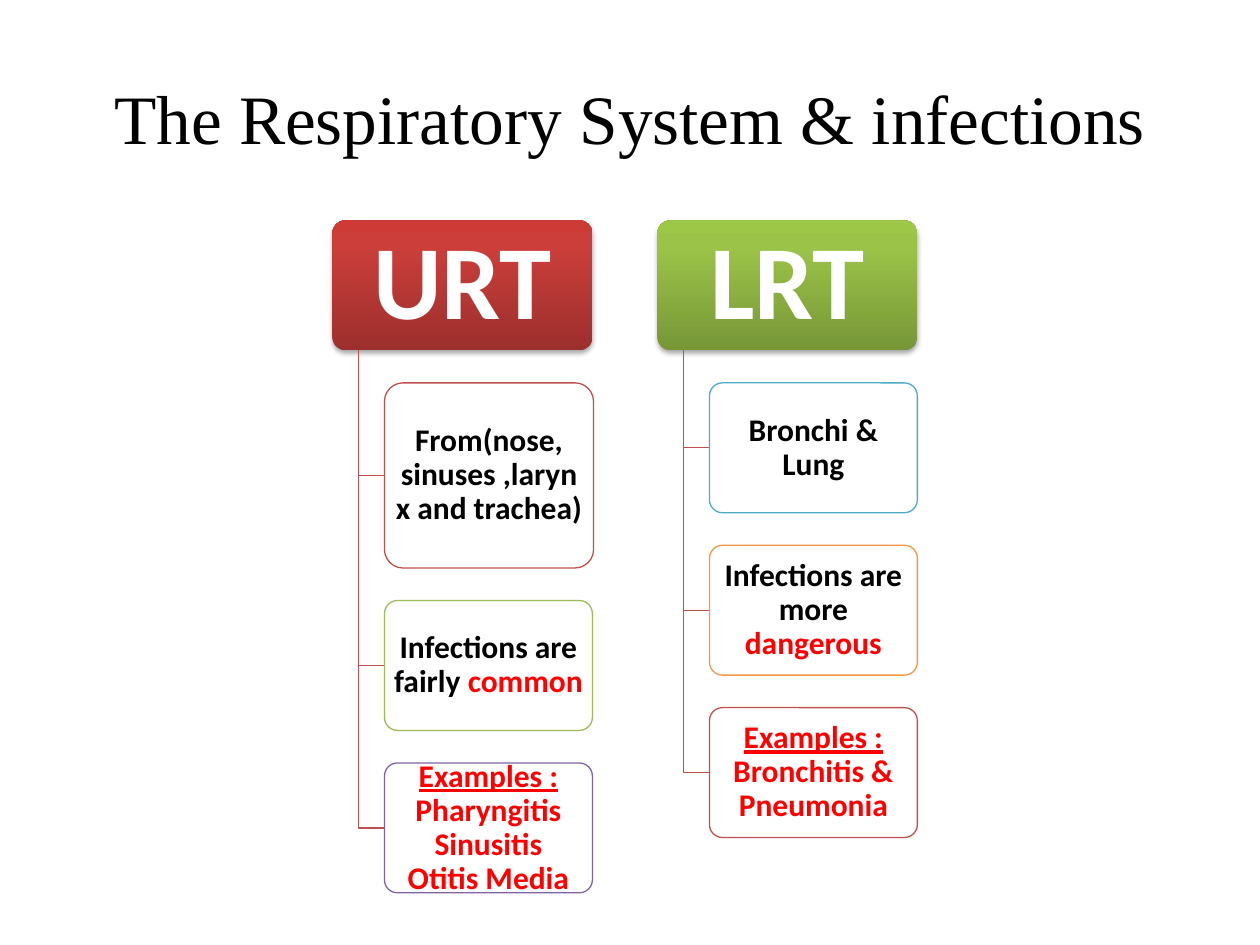
from lxml import etree
from pptx import Presentation
from pptx.dml.color import RGBColor
from pptx.enum.shapes import MSO_SHAPE
from pptx.enum.text import MSO_ANCHOR, MSO_AUTO_SIZE, PP_ALIGN
from pptx.oxml.ns import qn
from pptx.util import Pt

ROUND = MSO_SHAPE.ROUNDED_RECTANGLE
MIDDLE = MSO_ANCHOR.MIDDLE
CENTER = PP_ALIGN.CENTER
NO_FIT = MSO_AUTO_SIZE.NONE

BLACK = RGBColor(0x00, 0x00, 0x00)
WHITE = RGBColor(0xFF, 0xFF, 0xFF)
RED = RGBColor(0xFF, 0x00, 0x00)
BRICK = RGBColor(0xC0, 0x50, 0x4D)
GREEN = RGBColor(0x9B, 0xBB, 0x59)
PURPLE = RGBColor(0x80, 0x64, 0xA2)
TEAL = RGBColor(0x4B, 0xAC, 0xC6)
ORANGE = RGBColor(0xF7, 0x96, 0x46)
RED_FADE = [(0, RGBColor(0x9C, 0x2F, 0x2D)), (80, RGBColor(0xCB, 0x3E, 0x3A)),
            (100, RGBColor(0xCE, 0x3B, 0x37))]
GREEN_FADE = [(0, RGBColor(0x77, 0x97, 0x37)), (80, RGBColor(0x9B, 0xC3, 0x48)),
              (100, RGBColor(0x9D, 0xC7, 0x46))]

BODY = dict(name="Calibri", size=Pt(18), bold=True)
PLAIN = dict(BODY, color=BLACK)
ALERT = dict(BODY, color=RED)
UNDER = dict(ALERT, underline=True)
HEAD = dict(BODY, size=Pt(60), color=WHITE)
TITLE = dict(name="Times New Roman", size=Pt(39.6), color=BLACK)

# Lengths in points
TOP, HEAD_W, HIGH, GAP = 126, 148.5, 74.2, 18.6
STEM, INDENT, ITEM_W = 14.8, 29.7, 118.8

# Each column: left, heading, fade, items of (outline, width, height, paragraphs)
COLUMNS = [
    (190, "URT", RED_FADE, [
        (BRICK, 119.5, 105.8, [[("From(nose, sinuses ,larynx and trachea)", PLAIN)]]),
        (GREEN, ITEM_W, HIGH, [[("Infections are fairly ", PLAIN), ("common", ALERT)]]),
        (PURPLE, ITEM_W, HIGH, [[("Examples :", UNDER), (" Pharyngitis", ALERT)],
                                [("Sinusitis", ALERT)], [("Otitis Media", ALERT)]]),
    ]),
    (375.7, "LRT", GREEN_FADE, [
        (TEAL, ITEM_W, HIGH, [[("Bronchi & Lung", PLAIN)]]),
        (ORANGE, ITEM_W, HIGH, [[("Infections are more ", PLAIN), ("dangerous", ALERT)]]),
        (BRICK, ITEM_W, HIGH, [[("Examples : ", UNDER),
                                ("Bronchitis & Pneumonia", ALERT)]]),
    ]),
]


def write(frame, paras, pad_x, pad_y, spacing=0.9):
    form = dict(word_wrap=True, auto_size=NO_FIT, vertical_anchor=MIDDLE,
                margin_left=Pt(pad_x), margin_right=Pt(pad_x),
                margin_top=Pt(pad_y), margin_bottom=Pt(pad_y))
    for key, value in form.items():
        setattr(frame, key, value)
    for i, runs in enumerate(paras):
        para = frame.add_paragraph() if i else frame.paragraphs[0]
        para.alignment = CENTER
        para.line_spacing = spacing
        for text, style in runs:
            run = para.add_run()
            run.text = text
            for key, value in style.items():
                if key == "color":
                    run.font.color.rgb = value
                else:
                    setattr(run.font, key, value)


def add_box(slide, x, y, w, h):
    box = slide.shapes.add_shape(ROUND, Pt(x), Pt(y), Pt(w), Pt(h))
    box.adjustments[0] = 0.1
    box.shadow.inherit = False
    return box


def add_color(parent, color, alpha=None):
    node = etree.SubElement(parent, qn("a:srgbClr"), val=str(color))
    if alpha:
        etree.SubElement(node, qn("a:alpha"), val=str(alpha * 1000))


def add_head(slide, x, text, fade):
    box = add_box(slide, x, TOP, HEAD_W, HIGH)
    box.line.fill.background()
    box.fill.gradient()
    box.fill.gradient_angle = 90
    props = box.element.spPr
    stops = props.find(".//" + qn("a:gsLst"))
    for stop in list(stops):
        stops.remove(stop)
    for pos, color in fade:
        add_color(etree.SubElement(stops, qn("a:gs"), pos=str(pos * 1000)), color)
    shade = etree.SubElement(props.find(qn("a:effectLst")), qn("a:outerShdw"),
                             blurRad=str(Pt(3.1)), dist=str(Pt(1.8)),
                             dir="5400000", rotWithShape="0")
    add_color(shade, BLACK, 35)
    write(box.text_frame, [[(text, HEAD)]], 9, 6)


def add_elbow(slide, x, y):
    """Run from the foot of the heading at x down to y, then right to the item."""
    path = slide.shapes.build_freeform(Pt(x + STEM), Pt(TOP + HIGH))
    path.add_line_segments([(Pt(x + STEM), Pt(y)), (Pt(x + INDENT), Pt(y))], close=False)
    elbow = path.convert_to_shape()
    elbow.shadow.inherit = False
    elbow.fill.background()
    elbow.line.color.rgb = BRICK
    elbow.line.width = Pt(0.75)


def add_item(slide, x, y, w, h, color, paras):
    box = add_box(slide, x, y, w, h)
    box.fill.solid()
    box.fill.fore_color.rgb = WHITE
    tint = box.element.spPr.find(qn("a:solidFill")).find(qn("a:srgbClr"))
    etree.SubElement(tint, qn("a:alpha"), val="90000")
    box.line.color.rgb = color
    box.line.width = Pt(0.75)
    write(box.text_frame, paras, 2.9, 2)


def add_title(slide, text):
    title = slide.shapes.title
    place = dict(left=36, top=21.6, width=648, height=90)
    for key, value in place.items():
        setattr(title, key, Pt(value))
    write(title.text_frame, [[(text, TITLE)]], 7.2, 3.6, 1.0)


def main():
    deck = Presentation()
    deck.slide_width, deck.slide_height = Pt(720), Pt(540)
    slide = deck.slides.add_slide(deck.slide_layouts[5])
    add_title(slide, "The Respiratory System & infections")
    for x, text, fade, items in COLUMNS:
        add_head(slide, x, text, fade)
        y = TOP + HIGH + GAP
        for color, w, h, paras in items:
            add_elbow(slide, x, y + h / 2)
            add_item(slide, x + INDENT, y, w, h, color, paras)
            y += h + GAP
    deck.save("out.pptx")


if __name__ == "__main__":
    main()
